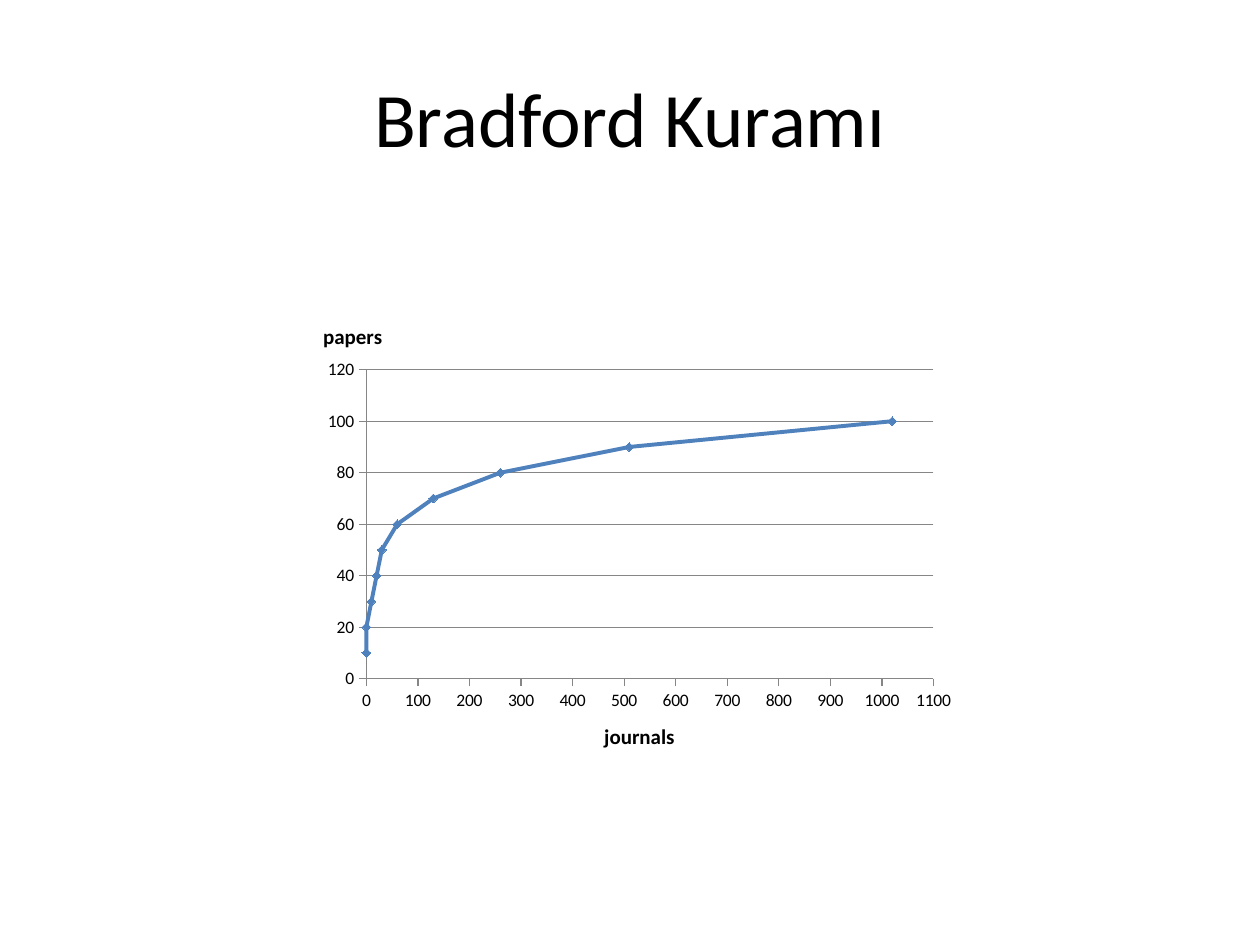
import pptx
import pptx.chart.data
import pptx.dml.color
import pptx.enum.chart
import pptx.enum.text
import pptx.oxml
import pptx.oxml.ns
import pptx.util

Pt = pptx.util.Pt
FONT = "Calibri"
COLORS = {"text": "000000", "curve": "4F81BD", "axis": "868686"}
JOURNALS = [0, 0, 10, 20, 30, 60, 130, 260, 510, 1020]
PAPERS = range(10, 101, 10)


def rgb(name):
    return pptx.dml.color.RGBColor.from_string(COLORS[name])


def style_font(font, size, bold=False):
    font.name = FONT
    font.size = Pt(size)
    font.bold = bold
    font.color.rgb = rgb("text")


def style_line(line, color, width):
    line.color.rgb = rgb(color)
    line.width = Pt(width)


def add_title(slide, text):
    sp = slide.shapes.title
    sp.left, sp.top, sp.width, sp.height = Pt(36), Pt(21.6), Pt(648), Pt(90)
    tf = sp.text_frame
    tf.text = text
    tf.vertical_anchor = pptx.enum.text.MSO_ANCHOR.MIDDLE
    p = tf.paragraphs[0]
    p.alignment = pptx.enum.text.PP_ALIGN.CENTER
    style_font(p.runs[0].font, 44)


def label(owner, text):
    """Give a chart or an axis a bold title and return that title."""
    owner.has_title = True
    title = owner.chart_title if hasattr(owner, "chart_title") else owner.axis_title
    title.text_frame.text = text
    style_font(title.text_frame.paragraphs[0].runs[0].font, 12, bold=True)
    return title


def set_layout(element, after=None, target=None, **place):
    """Place a chart part by fractions of the chart area."""
    qn = pptx.oxml.ns.qn
    for old in element.findall(qn("c:layout")):
        element.remove(old)
    parts = [("layoutTarget", target)] if target else []
    parts += [("xMode", "edge"), ("yMode", "edge"), *place.items()]
    inner = "".join(f'<c:{tag} val="{val}"/>' for tag, val in parts)
    layout = pptx.oxml.parse_xml(
        f'<c:layout {pptx.oxml.ns.nsdecls("c")}>'
        f"<c:manualLayout>{inner}</c:manualLayout></c:layout>"
    )
    if after is None:
        element.insert(0, layout)
    else:
        element.find(qn(after)).addnext(layout)


def style_axis(axis, top, step, grid):
    axis.minimum_scale, axis.maximum_scale, axis.major_unit = 0, top, step
    axis.major_tick_mark = pptx.enum.chart.XL_TICK_MARK.OUTSIDE
    axis.minor_tick_mark = pptx.enum.chart.XL_TICK_MARK.NONE
    axis.tick_labels.number_format = "General"
    axis.tick_labels.number_format_is_linked = False
    style_font(axis.tick_labels.font, 10)
    style_line(axis.format.line, "axis", 0.75)
    axis.has_major_gridlines = grid
    if grid:
        style_line(axis.major_gridlines.format.line, "axis", 0.75)


def style_curve(series):
    series.smooth = False
    style_line(series.format.line, "curve", 2.25)
    marker = series.marker
    marker.style = pptx.enum.chart.XL_MARKER_STYLE.DIAMOND
    marker.size = 5
    marker.format.fill.solid()
    marker.format.fill.fore_color.rgb = rgb("curve")
    style_line(marker.format.line, "curve", 0.75)


def add_curve_chart(slide):
    data = pptx.chart.data.XyChartData()
    points = data.add_series("papers")
    for x, y in zip(JOURNALS, PAPERS):
        points.add_data_point(x, y)
    chart = slide.shapes.add_chart(
        pptx.enum.chart.XL_CHART_TYPE.XY_SCATTER_LINES,
        Pt(174.24), Pt(174.24), Pt(408.24), Pt(257.76), data,
    ).chart
    style_font(chart.font, 10)
    chart.has_legend = False
    chart.plots[0].vary_by_categories = False
    style_curve(chart.plots[0].series[0])
    style_axis(chart.category_axis, 1100, 100, grid=False)
    style_axis(chart.value_axis, 120, 20, grid=True)
    label(chart.category_axis, "journals")
    title = label(chart, "papers")
    set_layout(title._element, after="c:tx", x=0.02, y=0.03)
    plot_area = chart.plots[0]._element.getparent()
    set_layout(plot_area, target="inner", x=0.086, y=0.144, w=0.794, h=0.685)


def main():
    prs = pptx.Presentation()
    prs.slide_width, prs.slide_height = Pt(720), Pt(540)
    slide = prs.slides.add_slide(prs.slide_layouts[5])
    add_title(slide, "Bradford Kuramı")
    add_curve_chart(slide)
    prs.save("out.pptx")


if __name__ == "__main__":
    main()
